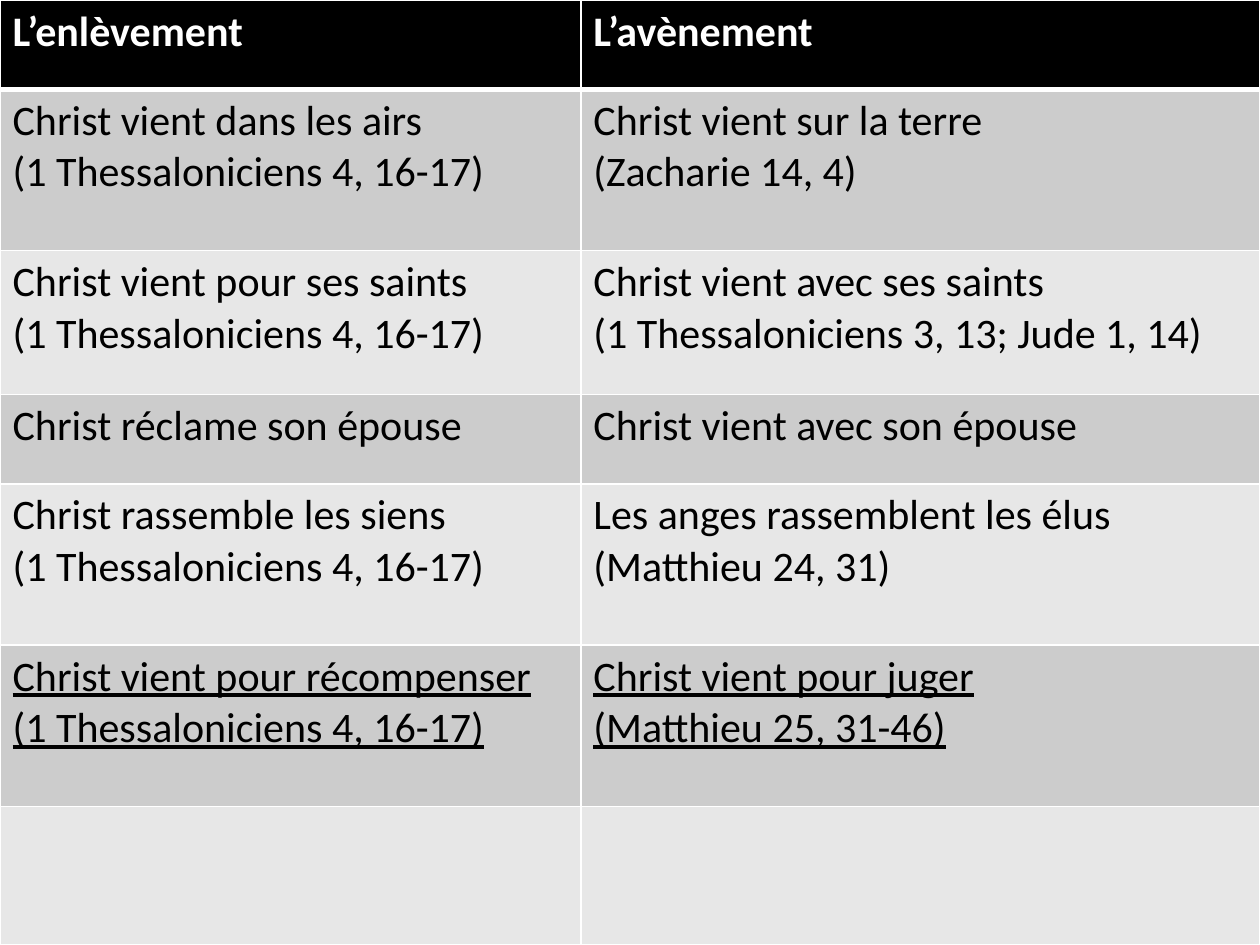
import pptx
import pptx.dml.color
import pptx.oxml
import pptx.oxml.ns
import pptx.util
from pptx.util import Inches

BLACK, WHITE = "000000", "FFFFFF"
BANDS = ("CCCCCC", "E7E7E7")
THESSALONIANS = "(1 Thessaloniciens 4, 16-17)"

COLUMN_WIDTHS = (4.61, 5.39)
ROW_HEIGHTS = (0.71, 1.28, 1.14, 0.71, 1.28, 1.28, 1.1)
COMPARISON = (
    ("L’enlèvement", "L’avènement"),
    (f"Christ vient dans les airs\n{THESSALONIANS}",
     "Christ vient sur la terre\n(Zacharie 14, 4)"),
    (f"Christ vient pour ses saints\n{THESSALONIANS}",
     "Christ vient avec ses saints\n(1 Thessaloniciens 3, 13; Jude 1, 14)"),
    ("Christ réclame son épouse", "Christ vient avec son épouse"),
    (f"Christ rassemble les siens\n{THESSALONIANS}",
     "Les anges rassemblent les élus\n(Matthieu 24, 31)"),
    (f"Christ vient pour récompenser\n{THESSALONIANS}",
     "Christ vient pour juger\n(Matthieu 25, 31-46)"),
    ("", ""),
)
JUDGEMENT_ROW = 5


def color(value):
    return pptx.dml.color.RGBColor.from_string(value)


class SlideWriter:
    font_name = "Calibri"
    font_size = 24
    border_color = WHITE

    def __init__(self, slide):
        self.slide = slide

    def borders(self, cell, top, bottom):
        properties = cell._tc.get_or_add_tcPr()
        widths = {"lnL": 1, "lnR": 1, "lnT": top, "lnB": bottom}
        for position, (side, width) in enumerate(widths.items()):
            properties.insert(position, pptx.oxml.parse_xml(
                f'<a:{side} {pptx.oxml.ns.nsdecls("a")} w="{pptx.util.Pt(width)}">'
                f'<a:solidFill><a:srgbClr val="{self.border_color}"/></a:solidFill>'
                f'</a:{side}>'))

    def cell(self, cell, text, fill, text_color, bold, underline):
        cell.fill.solid()
        cell.fill.fore_color.rgb = color(fill)
        cell.text_frame.text = text
        for paragraph in cell.text_frame.paragraphs:
            for run in paragraph.runs:
                run.font.name = self.font_name
                run.font.size = pptx.util.Pt(self.font_size)
                run.font.color.rgb = color(text_color)
                run.font.bold = bold
                run.font.underline = underline

    def table(self, rows, column_widths, row_heights, underlined_row):
        frame = self.slide.shapes.add_table(
            len(rows), len(column_widths), 0, 0,
            Inches(sum(column_widths)), Inches(sum(row_heights)))
        table = frame.table
        for column, width in zip(table.columns, column_widths):
            column.width = Inches(width)
        for index, (row, height, texts) in enumerate(
                zip(table.rows, row_heights, rows)):
            row.height = Inches(height)
            header = index == 0
            fill = BLACK if header else BANDS[(index - 1) % 2]
            for cell, text in zip(row.cells, texts):
                self.cell(cell, text, fill, WHITE if header else BLACK,
                          header, index == underlined_row)
                self.borders(cell, top=3 if index == 1 else 1,
                             bottom=3 if header else 1)


def main():
    presentation = pptx.Presentation()
    presentation.slide_width = Inches(10)
    presentation.slide_height = Inches(7.5)
    blank_layout = presentation.slide_layouts[6]
    writer = SlideWriter(presentation.slides.add_slide(blank_layout))
    writer.table(COMPARISON, COLUMN_WIDTHS, ROW_HEIGHTS, JUDGEMENT_ROW)
    presentation.save("out.pptx")


if __name__ == "__main__":
    main()
